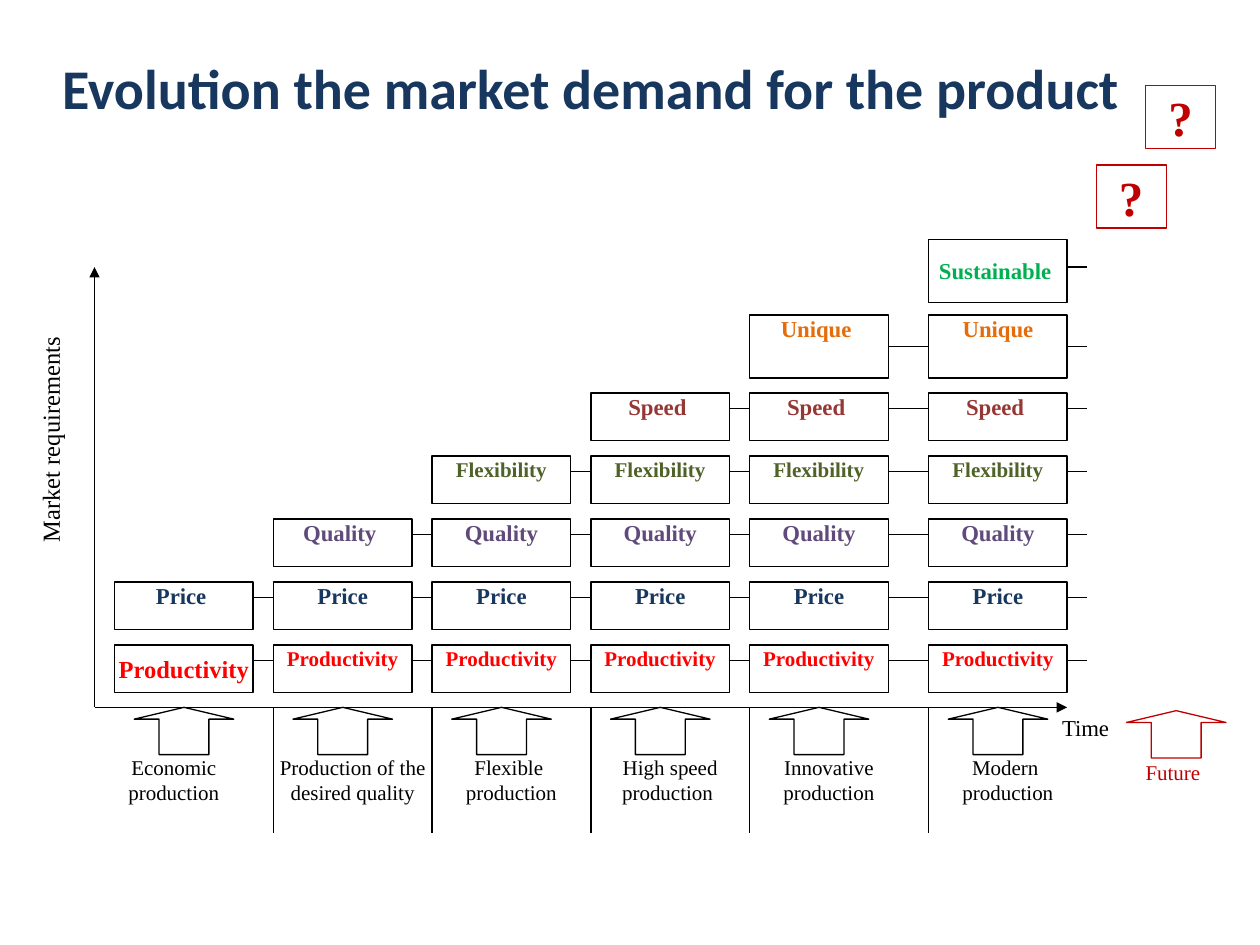
from lxml import etree
from pptx import Presentation
from pptx.dml.color import RGBColor
from pptx.enum import shapes, text
from pptx.oxml import ns
from pptx.util import Pt

BLACK, RED, WHITE = "000000", "C00000", "FFFFFF"
SERIF = "Times New Roman"
TOP, MID = text.MSO_ANCHOR.TOP, text.MSO_ANCHOR.MIDDLE
LEFT, CENTER = text.PP_ALIGN.LEFT, text.PP_ALIGN.CENTER
WIDE, TALL, PITCH, STEP = 79.2, 27, 90.72, 36
BASE, AXIS, END = 368.64, 404.2, 621.4
COLS = [65.5 + PITCH * i for i in range(5)] + [530.64]
STAGES = ["Economic production", "Production of the desired quality",
          "Flexible \nproduction", "High speed production ",
          "Innovative production", "Modern \nproduction"]
ROWS = [
    ("Productivity", "Productivity", 0, 12, "FF0000"),
    ("Price ", "Price", 0, 13, "17375E"),
    ("Quality ", "Quality", 1, 13, "604A7B"),
    ("Flexibility", "Flexibility", 2, 12, "4F6228"),
    ("Speed ", "Speed ", 3, 13, "953735"),
    ("Unique ", "Unique", 4, 13, "E46C0A"),
    ("Sustainable ", "", 5, 13, "00B050"),
]
HIGH = {5: (180, 198), 6: (136.8, 152.6)}


def color(code):
    return RGBColor.from_string(code)


def apply(item, values):
    for name, value in values.items():
        setattr(item, name, value)


def write(frame, words, size, code, bold=False, font=SERIF,
          align=CENTER, anchor=TOP, inset=0):
    frame.text = words
    apply(frame, {"word_wrap": True, "vertical_anchor": anchor})
    if inset is not None:
        sides = ("left", "right", "top", "bottom")
        apply(frame, {f"margin_{side}": Pt(inset) for side in sides})
    for para in frame.paragraphs:
        para.alignment = align
        for run in para.runs:
            apply(run.font, {"name": font, "size": Pt(size), "bold": bold})
            run.font.color.rgb = color(code)


def block(slide, kind, x, y, w, h, edge=None):
    item = slide.shapes.add_shape(kind, Pt(x), Pt(y), Pt(w), Pt(h))
    item.shadow.inherit = False
    item.fill.solid()
    item.fill.fore_color.rgb = color(WHITE)
    if edge:
        item.line.color.rgb = color(edge)
        item.line.width = Pt(0.75)
    else:
        item.line.fill.background()
    return item


def box(slide, x, y, w, h, words, size, code, edge=None, **style):
    item = block(slide, shapes.MSO_SHAPE.RECTANGLE, x, y, w, h, edge)
    write(item.text_frame, words, size, code, **style)
    return item


def arrow(slide, x, y, edge=BLACK):
    item = block(slide, shapes.MSO_SHAPE.UP_ARROW, x, y, 56.9, TALL, edge)
    item.adjustments[0], item.adjustments[1] = 0.5, 0.25


def line(slide, x1, y1, x2, y2, tip=False):
    item = slide.shapes.add_connector(
        shapes.MSO_CONNECTOR.STRAIGHT, Pt(x1), Pt(y1), Pt(x2), Pt(y2))
    item.line.color.rgb = color(BLACK)
    item.line.width = Pt(0.75)
    if tip:
        edge = item.line._get_or_add_ln()
        etree.SubElement(edge, ns.qn("a:tailEnd"), type="triangle")
    etree.SubElement(item.element.spPr, ns.qn("a:effectLst"))


def stack(slide, row):
    first, rest, start, size, code = ROWS[row]
    level = BASE - STEP * row
    top, mid = HIGH.get(row, (level, level + 8.6))
    tall = STEP if row in HIGH else TALL
    line(slide, COLS[start] + WIDE, mid, END, mid)
    for col in range(start, len(COLS)):
        lead = col == start
        large = lead and row == 0
        words = first if lead else rest
        anchor = MID if large or row == 6 else TOP
        if row == 5 and col == 5:
            words = rest
        box(slide, COLS[col], top, WIDE, tall, words, 14 if large else size,
            code, BLACK, bold=True, anchor=anchor)


def stages(slide):
    for i, (x, words) in enumerate(zip(COLS, STAGES)):
        tall = 44.6 if i == 1 else 40.3
        box(slide, x if i else 54, 431.2, PITCH, tall, words, 12, BLACK)
    for i, x in enumerate(COLS):
        arrow(slide, x + 11.2, AXIS)
        if i:
            line(slide, x, AXIS, x, 476)


def axes(slide):
    box(slide, 599.8, AXIS, 43.2, 27, "Time", 13, BLACK,
        align=LEFT, inset=None)
    side = box(slide, 20.2, 180, 27.4, 139, "Market requirements ", 14, BLACK)
    side.element.txBody.bodyPr.set("vert", "vert270")
    line(slide, 54, AXIS, 54, 152.6, True)
    line(slide, 54, AXIS, 609.8, AXIS, True)


def future(slide):
    for x, y in ((626.4, 94.3), (654.7, 49)):
        box(slide, x, y, 40, 36, "?", 28, RED, RED, bold=True, anchor=MID)
    box(slide, 637.9, 434.2, 67.7, 21.6, "Future ", 12, RED)
    arrow(slide, 643.7, 406.1, RED)


def main():
    deck = Presentation()
    apply(deck, {"slide_width": Pt(720), "slide_height": Pt(540)})
    slide = deck.slides.add_slide(deck.slide_layouts[5])
    title = slide.shapes.title
    apply(title, {"left": Pt(13.7), "top": Pt(13.7),
                  "width": Pt(648), "height": Pt(72.7)})
    write(title.text_frame, "Evolution the market demand for the product", 32,
          "17375E", bold=True, font="Calibri", anchor=MID, inset=None)
    axes(slide)
    for row in range(len(ROWS)):
        stack(slide, row)
    stages(slide)
    future(slide)
    deck.save("out.pptx")


if __name__ == "__main__":
    main()
